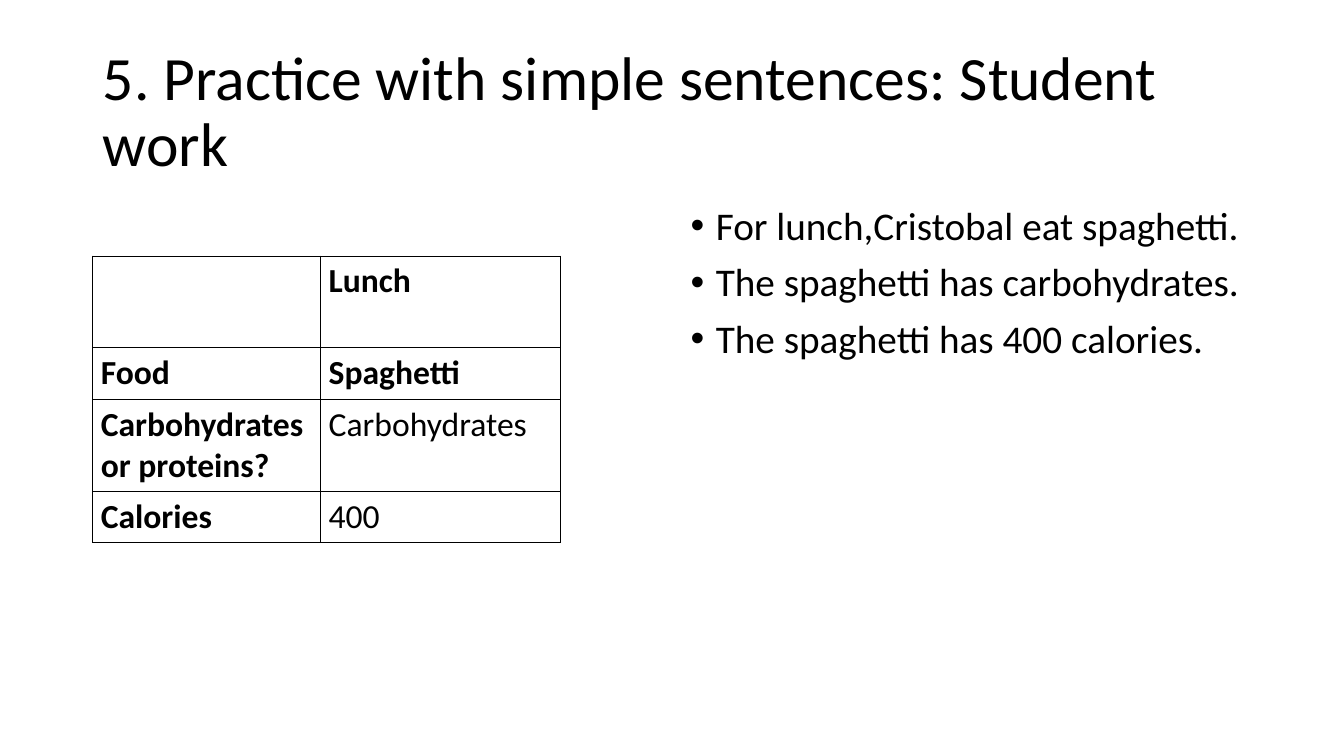
from dataclasses import dataclass

from lxml import etree
from pptx import Presentation
from pptx import util as u
from pptx.dml.color import RGBColor
from pptx.enum import text
from pptx.oxml.ns import qn


@dataclass(frozen=True)
class Theme:
    font: str = "Calibri"
    ink: str = "000000"
    title_size: float = 44
    body_size: float = 28
    table_size: float = 24
    border_width: float = 0.5


class SlideBuilder:
    def __init__(self, page, theme):
        self.page = page
        self.theme = theme

    def add_span(self, para, words, size, bold=False):
        span = para.add_run()
        span.text = words
        span.font.name = self.theme.font
        span.font.size = u.Pt(size)
        span.font.bold = bold
        span.font.color.rgb = RGBColor.from_string(self.theme.ink)

    def place(self, box, left, top, width, height, anchor):
        box.left, box.top = u.Inches(left), u.Inches(top)
        box.width, box.height = u.Inches(width), u.Inches(height)
        frame = box.text_frame
        frame.word_wrap = True
        frame.auto_size = text.MSO_AUTO_SIZE.NONE
        frame.vertical_anchor = anchor
        return frame

    def title(self, words, *area):
        frame = self.place(self.page.shapes.title, *area, text.MSO_ANCHOR.MIDDLE)
        para = frame.paragraphs[0]
        para.alignment = text.PP_ALIGN.LEFT
        para.line_spacing = 0.9
        self.add_span(para, words, self.theme.title_size)

    def bullets(self, sentences, *area):
        frame = self.place(self.page.placeholders[1], *area, text.MSO_ANCHOR.TOP)
        for index, sentence in enumerate(sentences):
            para = frame.add_paragraph() if index else frame.paragraphs[0]
            para.line_spacing = 0.9
            para.space_before = u.Pt(10)
            properties = para._p.get_or_add_pPr()
            properties.set("marL", str(u.Inches(0.25)))
            properties.set("indent", str(u.Inches(-0.25)))
            self.add_span(para, sentence, self.theme.body_size)

    def outline(self, cell):
        properties = cell._tc.get_or_add_tcPr()
        for side in ("a:lnL", "a:lnR", "a:lnT", "a:lnB"):
            line = etree.SubElement(properties, qn(side))
            line.set("w", str(u.Pt(self.theme.border_width)))
            fill = etree.SubElement(line, qn("a:solidFill"))
            etree.SubElement(fill, qn("a:srgbClr")).set("val", self.theme.ink)

    def table(self, rows, left, top, widths, heights):
        frame = self.page.shapes.add_table(
            len(heights), len(widths), u.Inches(left), u.Inches(top),
            u.Inches(sum(widths)), u.Inches(sum(heights)))
        table = frame.table
        table.first_row = table.horz_banding = False
        for column, width in zip(table.columns, widths):
            column.width = u.Inches(width)
        for row, height, entries in zip(table.rows, heights, rows):
            row.height = u.Inches(height)
            for cell, (words, bold) in zip(row.cells, entries):
                cell.margin_left = cell.margin_right = u.Inches(0.08)
                cell.margin_top = cell.margin_bottom = u.Inches(0.05)
                self.outline(cell)
                cell.fill.background()
                if words:
                    self.add_span(cell.text_frame.paragraphs[0], words,
                                  self.theme.table_size, bold)


def main():
    deck = Presentation()
    deck.slide_width, deck.slide_height = u.Inches(13.33), u.Inches(7.5)
    page = deck.slides.add_slide(deck.slide_layouts[1])
    builder = SlideBuilder(page, Theme())

    builder.title("5. Practice with simple sentences: Student work",
                  0.92, 0.4, 11.5, 1.45)
    meal = [
        [("", False), ("Lunch", True)],
        [("Food", True), ("Spaghetti", True)],
        [("Carbohydrates or proteins?", True), ("Carbohydrates", False)],
        [("Calories", True), ("400", False)],
    ]
    builder.table(meal, 0.92, 2.54, [2.26, 2.38], [0.91, 0.51, 0.91, 0.51])
    builder.bullets([
        "For lunch,Cristobal eat spaghetti.",
        "The spaghetti has carbohydrates.",
        "The spaghetti has 400 calories.",
    ], 6.75, 2, 5.67, 4.76)

    deck.save("out.pptx")


if __name__ == "__main__":
    main()
